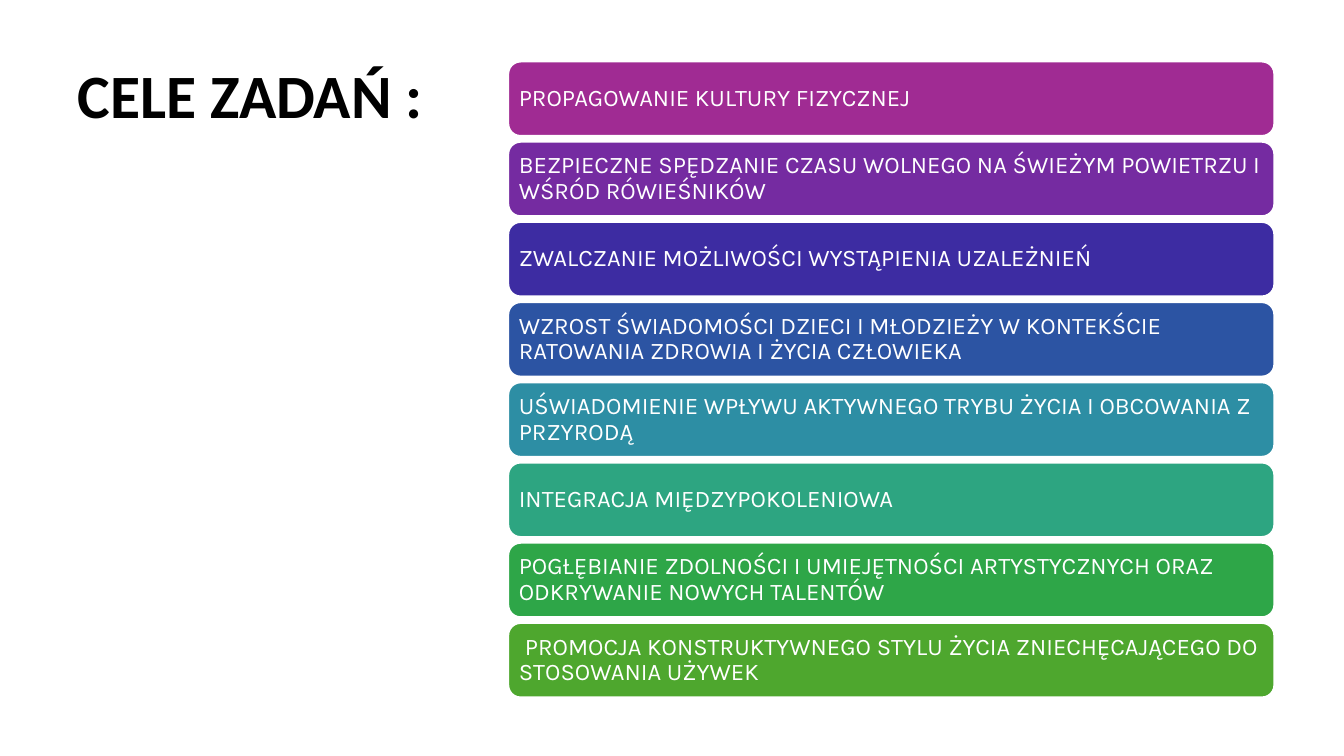
from dataclasses import dataclass

import pptx
import pptx.dml.color
import pptx.enum.shapes
import pptx.enum.text
import pptx.util

PX = 9144
PAGE_WIDTH, PAGE_HEIGHT = 1333, 750
GOAL_LEFT, GOAL_WIDTH, GOAL_HEIGHT = 504, 760, 74
FIRST_TOP, LAST_TOP = 61, 618
TITLE_FORMAT = {"name": "Calibri", "size": pptx.util.Pt(44), "bold": True}
GOAL_FORMAT = {"name": "Karla", "size": pptx.util.Pt(17), "bold": False}


@dataclass(frozen=True)
class Goal:
    text: str
    fill: str
    indent: int = 0


GOALS = [
    Goal("PROPAGOWANIE KULTURY FIZYCZNEJ", "A02B93"),
    Goal("BEZPIECZNE SPĘDZANIE CZASU WOLNEGO NA ŚWIEŻYM POWIETRZU I WŚRÓD RÓWIEŚNIKÓW", "752BA1"),
    Goal("ZWALCZANIE MOŻLIWOŚCI WYSTĄPIENIA UZALEŻNIEŃ", "3D2CA2"),
    Goal("WZROST ŚWIADOMOŚCI DZIECI I MŁODZIEŻY W KONTEKŚCIE RATOWANIA ZDROWIA I ŻYCIA CZŁOWIEKA", "2C54A3"),
    Goal("UŚWIADOMIENIE WPŁYWU AKTYWNEGO TRYBU ŻYCIA I OBCOWANIA Z PRZYRODĄ", "2D8EA4"),
    Goal("INTEGRACJA MIĘDZYPOKOLENIOWA", "2DA581"),
    Goal("POGŁĘBIANIE ZDOLNOŚCI I UMIEJĘTNOŚCI ARTYSTYCZNYCH ORAZ ODKRYWANIE NOWYCH TALENTÓW", "2EA648"),
    Goal("PROMOCJA KONSTRUKTYWNEGO STYLU ŻYCIA ZNIECHĘCAJĄCEGO DO STOSOWANIA UŻYWEK", "4EA72E", indent=6),
]


def px(length: float) -> pptx.util.Emu:
    return pptx.util.Emu(round(length * PX))


def color(value: str) -> pptx.dml.color.RGBColor:
    return pptx.dml.color.RGBColor.from_string(value)


def write(box, text: str, ink: str, font_format: dict, frame_format: dict, indent: int = 0) -> None:
    for name, value in frame_format.items():
        setattr(box.text_frame, name, value)
    para = box.text_frame.paragraphs[0]
    para.alignment = pptx.enum.text.PP_ALIGN.LEFT
    para.line_spacing = 0.9
    if indent:
        para._p.get_or_add_pPr().set("indent", str(px(indent)))
    span = para.add_run()
    span.text = text
    for name, value in font_format.items():
        setattr(span.font, name, value)
    span.font.color.rgb = color(ink)


def draw_title(page) -> None:
    box = page.shapes.add_textbox(px(67), px(60), px(382), px(633))
    frame_format = {"word_wrap": True, "vertical_anchor": pptx.enum.text.MSO_ANCHOR.TOP}
    write(box, "CELE ZADAŃ :", "000000", TITLE_FORMAT, frame_format)


def draw_goal(page, goal: Goal, top: float) -> None:
    box = page.shapes.add_shape(
        pptx.enum.shapes.MSO_SHAPE.ROUNDED_RECTANGLE,
        px(GOAL_LEFT), px(top), px(GOAL_WIDTH), px(GOAL_HEIGHT),
    )
    box.shadow.inherit = False
    box.fill.solid()
    box.fill.fore_color.rgb = color(goal.fill)
    box.line.color.rgb = color("FFFFFF")
    box.line.width = pptx.util.Pt(1.5)
    frame_format = {"word_wrap": True, "vertical_anchor": pptx.enum.text.MSO_ANCHOR.MIDDLE}
    frame_format |= {f"margin_{side}": px(7) for side in ("left", "top", "right", "bottom")}
    write(box, goal.text, "FFFFFF", GOAL_FORMAT, frame_format, goal.indent)


def main() -> None:
    """Build the slide with the title and the list of goals."""
    deck = pptx.Presentation()
    deck.slide_width, deck.slide_height = px(PAGE_WIDTH), px(PAGE_HEIGHT)
    page = deck.slides.add_slide(deck.slide_layouts[6])
    draw_title(page)
    pitch = (LAST_TOP - FIRST_TOP) / (len(GOALS) - 1)
    for index, goal in enumerate(GOALS):
        draw_goal(page, goal, FIRST_TOP + index * pitch)
    deck.save("out.pptx")


if __name__ == "__main__":
    main()
